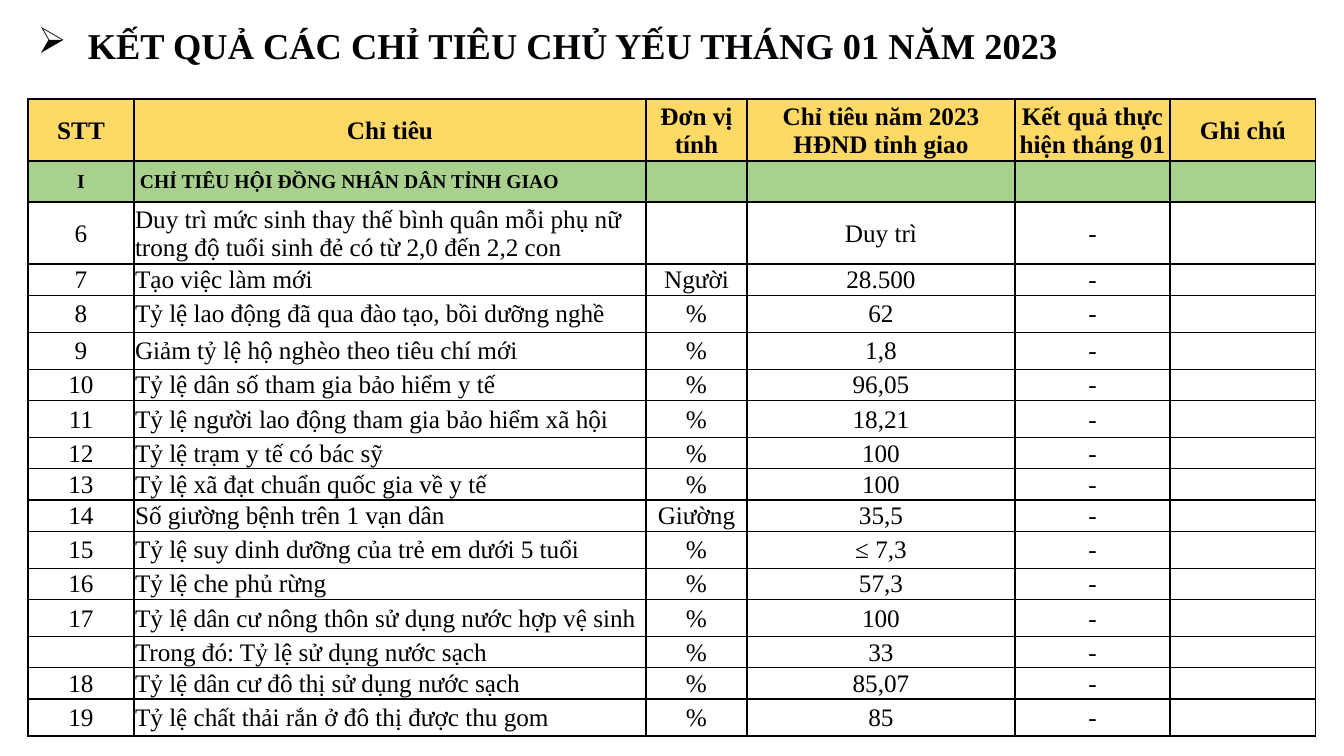
from pptx import Presentation
from pptx.dml.color import RGBColor
from pptx.enum.text import MSO_ANCHOR as Anchor, PP_ALIGN as Align
from pptx.oxml import parse_xml
from pptx.oxml.ns import nsdecls
from pptx.util import Pt

TITLE = "KẾT QUẢ CÁC CHỈ TIÊU CHỦ YẾU THÁNG 01 NĂM 2023"
HEAD = ("STT", "Chỉ tiêu", "Đơn vị tính", "Chỉ tiêu năm 2023 HĐND tỉnh giao",
        "Kết quả thực hiện tháng 01", "Ghi chú")
GROUP = ("I", " CHỈ TIÊU HỘI ĐỒNG NHÂN DÂN TỈNH GIAO", "", "", "", "")
# number, target, unit, yearly goal, row height in px
GOALS = [
    ("6", "Duy trì mức sinh thay thế bình quân mỗi phụ nữ trong độ tuổi "
          "sinh đẻ có từ 2,0 đến 2,2 con", "", "Duy trì", 62),
    ("7", "Tạo việc làm mới", "Người", "28.500", 31),
    ("8", "Tỷ lệ lao động đã qua đào tạo, bồi dưỡng nghề", "%", "62", 37),
    ("9", "Giảm tỷ lệ hộ nghèo theo tiêu chí mới", "%", "1,8", 37),
    ("10", "Tỷ lệ dân số tham gia bảo hiểm y tế", "%", "96,05", 31),
    ("11", "Tỷ lệ người lao động tham gia bảo hiểm xã hội", "%", "18,21", 37),
    ("12", "Tỷ lệ trạm y tế có bác sỹ", "%", "100", 31),
    ("13", "Tỷ lệ xã đạt chuẩn quốc gia về y tế", "%", "100", 31),
    ("14", "Số giường bệnh trên 1 vạn dân", "Giường", "35,5", 31),
    ("15", "Tỷ lệ suy dinh dưỡng của trẻ em dưới 5 tuổi", "%", "≤ 7,3", 37),
    ("16", "Tỷ lệ che phủ rừng", "%", "57,3", 31),
    ("17", "Tỷ lệ dân cư nông thôn sử dụng nước hợp vệ sinh", "%", "100", 37),
    ("", "Trong đó: Tỷ lệ sử dụng nước sạch", "%", "33", 31),
    ("18", "Tỷ lệ dân cư đô thị sử dụng nước sạch", "%", "85,07", 31),
    ("19", "Tỷ lệ chất thải rắn ở đô thị được thu gom", "%", "85", 37),
]
RESULT, NOTE = "-", ""
COLS = (106, 512, 101, 268, 155, 146)
HEAD_H, GROUP_H = 62, 41
LEFT, WIDTH = 28, sum(COLS)

FONT = "Times New Roman"
INK = RGBColor(0x04, 0x02, 0x06)
BLACK = RGBColor(0, 0, 0)
GOLD = RGBColor(0xFF, 0xD9, 0x66)
GREEN = RGBColor(0xA9, 0xD1, 0x8E)


def px(n):
    return round(n * 914400 / 100.8)


def style(para, size, color, bold):
    font = para.font
    font.name, font.size, font.bold = FONT, Pt(size), bold
    font.color.rgb = color


def border(cell):
    props = cell._tc.get_or_add_tcPr()
    for i, side in enumerate("LRTB"):
        props.insert(i, parse_xml(
            f'<a:ln{side} {nsdecls("a")} w="{Pt(1)}"><a:solidFill>'
            f'<a:srgbClr val="{BLACK}"/></a:solidFill></a:ln{side}>'))


def add_title(slide):
    box = slide.shapes.add_textbox(px(LEFT), px(18), px(WIDTH), px(54))
    box.text_frame.word_wrap = True
    para = box.text_frame.paragraphs[0]
    para.text = TITLE
    style(para, 26, INK, True)
    props = para._p.get_or_add_pPr()
    props.set("marL", str(px(50)))
    props.set("indent", str(px(-50)))
    props.insert(0, parse_xml(f'<a:buChar {nsdecls("a")} char="➢"/>'))


def fill_cell(cell, text, size, bold, color, align):
    cell.margin_left = cell.margin_right = cell.margin_top = px(1)
    cell.margin_bottom = 0
    cell.vertical_anchor = Anchor.MIDDLE
    if color is None:
        cell.fill.background()
    else:
        cell.fill.solid()
        cell.fill.fore_color.rgb = color
    border(cell)
    para = cell.text_frame.paragraphs[0]
    if text:
        para.text = text
    para.alignment = align
    style(para, size, BLACK, bold)


def add_goals(slide):
    rows = [(HEAD, HEAD_H, 18, True, GOLD), (GROUP, GROUP_H, 14, True, GREEN)]
    rows += [((*goal, RESULT, NOTE), high, 18, False, None)
             for *goal, high in GOALS]
    total = sum(row[1] for row in rows)
    table = slide.shapes.add_table(len(rows), len(COLS), px(LEFT), px(99),
                                   px(WIDTH), px(total)).table
    table.first_row = table.horz_banding = False
    for col, wide in zip(table.columns, COLS):
        col.width = px(wide)
    for r, (texts, high, size, bold, color) in enumerate(rows):
        table.rows[r].height = px(high)
        for c, text in enumerate(texts):
            align = Align.LEFT if c == 1 and r > 0 else Align.CENTER
            fill_cell(table.cell(r, c), text, size if text else 14,
                      bold, color, align)


def main():
    deck = Presentation()
    deck.slide_width, deck.slide_height = px(1344), px(756)
    slide = deck.slides.add_slide(deck.slide_layouts[6])
    add_title(slide)
    add_goals(slide)
    deck.save("out.pptx")


if __name__ == "__main__":
    main()
